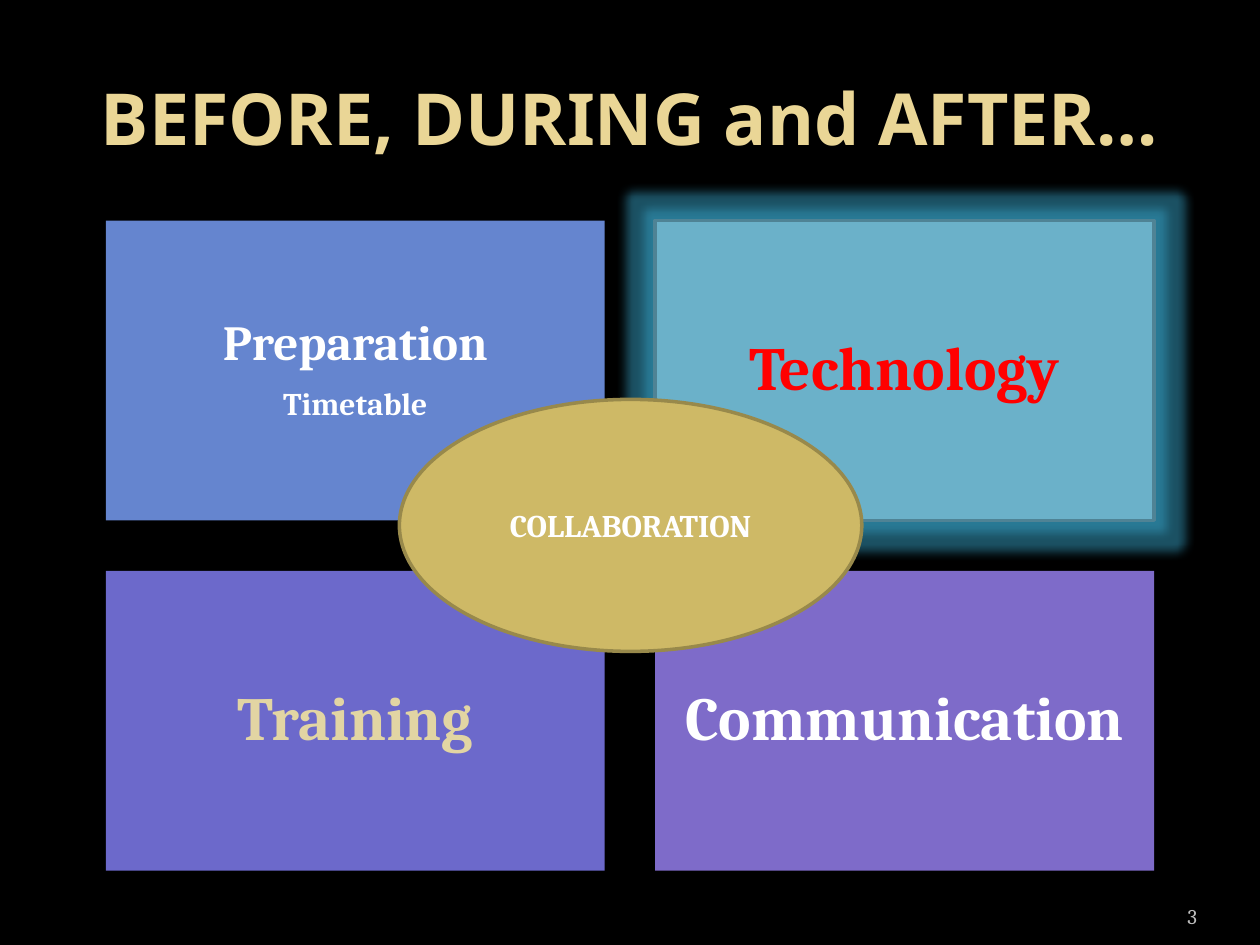
from lxml.etree import SubElement
from pptx import Presentation
from pptx.dml.color import RGBColor
from pptx.enum.shapes import MSO_SHAPE
from pptx.enum.text import MSO_ANCHOR, PP_ALIGN
from pptx.oxml.ns import qn
from pptx.util import Inches, Pt

BLACK = RGBColor(0x00, 0x00, 0x00)
WHITE = RGBColor(0xFF, 0xFF, 0xFF)
RED = RGBColor(0xFF, 0x00, 0x00)
CREAM = RGBColor(0xE2, 0xD5, 0xA3)
TITLE_GOLD = RGBColor(0xEA, 0xD6, 0x96)
GOLD = RGBColor(0xCE, 0xB9, 0x66)
DARK_GOLD = RGBColor(0x98, 0x89, 0x4B)
BLUE = RGBColor(0x65, 0x85, 0xCF)
TEAL = RGBColor(0x6B, 0xB1, 0xC9)
DARK_TEAL = RGBColor(0x4F, 0x83, 0x95)
GLOW_TEAL = RGBColor(0x37, 0xA3, 0xC8)
INDIGO = RGBColor(0x6C, 0x69, 0xCB)
PURPLE = RGBColor(0x7E, 0x6B, 0xC9)
GREY = RGBColor(0xBD, 0xBD, 0xBD)

BODY_FONT = "Cambria"
TITLE_FONT = "Noto Sans"

TILES = [
    (BLUE, WHITE, [("Preparation", 28), ("Timetable", 18)], 0.12),
    (TEAL, RED, [("Technology", 35)], 0.15),
    (INDIGO, CREAM, [("Training", 35)], 0.15),
    (PURPLE, WHITE, [("Communication", 35)], 0.15),
]
TILE_LEFT, TILE_TOP = 0.84, 1.75
TILE_WIDTH, TILE_HEIGHT = 3.96, 2.38
TILE_GAP = 0.4


def write(frame, lines, color, font=BODY_FONT, bold=True,
          align=PP_ALIGN.CENTER, anchor=MSO_ANCHOR.MIDDLE):
    frame.word_wrap = True
    frame.vertical_anchor = anchor
    frame.text = "\n".join(text for text, size in lines)
    for paragraph, (text, size) in zip(frame.paragraphs, lines):
        paragraph.alignment = align
        style = paragraph.runs[0].font
        style.name = font
        style.size = Pt(size)
        style.bold = bold
        style.color.rgb = color


def add_label(slide, box, text, size, color, **style):
    label = slide.shapes.add_textbox(*map(Inches, box))
    write(label.text_frame, [(text, size)], color, **style)
    return label


def add_block(slide, preset, box, fill, outline=None):
    block = slide.shapes.add_shape(preset, *map(Inches, box))
    block.shadow.inherit = False
    block.fill.solid()
    block.fill.fore_color.rgb = fill
    if outline is None:
        block.line.fill.background()
    else:
        block.line.color.rgb = outline
        block.line.width = Pt(2)
    return block


def add_glow(block, color, radius, opacity):
    effects = block._element.spPr.find(qn("a:effectLst"))
    glow = SubElement(effects, qn("a:glow"), rad=str(radius))
    tint = SubElement(glow, qn("a:srgbClr"), val=str(color))
    SubElement(tint, qn("a:alpha"), val=str(opacity * 1000))


def add_tile(slide, index, fill, color, lines, inset):
    row, column = divmod(index, 2)
    box = (TILE_LEFT + column * (TILE_WIDTH + TILE_GAP),
           TILE_TOP + row * (TILE_HEIGHT + TILE_GAP),
           TILE_WIDTH, TILE_HEIGHT)
    highlighted = fill == TEAL
    tile = add_block(slide, MSO_SHAPE.RECTANGLE, box, fill,
                     DARK_TEAL if highlighted else None)
    if highlighted:
        add_glow(tile, GLOW_TEAL, Pt(11), 50)
    frame = tile.text_frame
    frame.margin_left = frame.margin_right = Inches(inset)
    frame.margin_top = frame.margin_bottom = Inches(inset)
    write(frame, lines, color)
    for paragraph in frame.paragraphs:
        paragraph.line_spacing = 0.9
    for paragraph, (text, size) in zip(frame.paragraphs[:-1], lines):
        paragraph.space_after = Pt(round(size * 0.35))


def main():
    presentation = Presentation()
    presentation.slide_width = Inches(10)
    presentation.slide_height = Inches(7.5)
    slide = presentation.slides.add_slide(presentation.slide_layouts[6])
    slide.background.fill.solid()
    slide.background.fill.fore_color.rgb = BLACK

    add_label(slide, (0.5, 0.3, 9, 1.25), "BEFORE, DURING and AFTER…", 41,
              TITLE_GOLD, font=TITLE_FONT)
    for index, tile in enumerate(TILES):
        add_tile(slide, index, *tile)

    collaboration = add_block(slide, MSO_SHAPE.OVAL, (3.17, 3.17, 3.67, 2),
                              GOLD, DARK_GOLD)
    write(collaboration.text_frame, [("COLLABORATION", 18)], WHITE)

    page_number = add_label(slide, (8.67, 7.02, 0.83, 0.4), "3", 12, GREY,
                            bold=False, align=PP_ALIGN.RIGHT,
                            anchor=MSO_ANCHOR.BOTTOM)
    page_number.text_frame.margin_left = Inches(0)
    page_number.text_frame.margin_right = Inches(0)

    presentation.save("out.pptx")


main()
